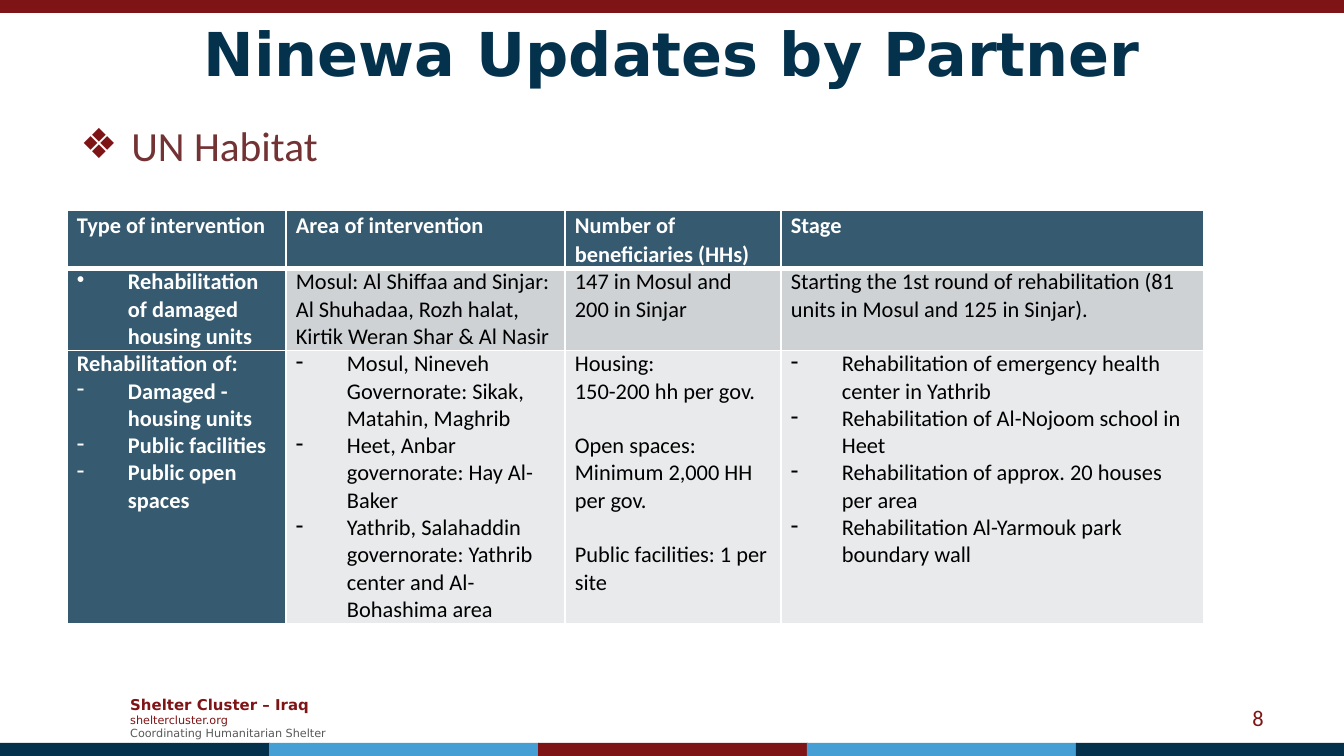
from lxml import etree
from pptx import Presentation
from pptx import util as u
from pptx.dml.color import RGBColor
from pptx.enum import shapes, text
from pptx.oxml import ns

SCALE = 914400 / 134.4  # EMU per px
NAVY, BLUE, RED, WHITE = "04314C", "459FD5", "7F1416", "FFFFFF"
HEAD, BAND, PALE = "365A70", "CED2D5", "E8EAEB"
SANS, BODY = "DejaVu Sans", "Calibri"
INDENT = 51
LEFT, MID = text.PP_ALIGN.LEFT, text.MSO_ANCHOR.MIDDLE

# Table content: plain lines, (bullet, line) pairs, or lines after a gap
GAP = "gap"
HEADS = ["Type of intervention", "Area of intervention",
         "Number of beneficiaries (HHs)", "Stage"]
HOUSING = [
    [("•", "Rehabilitation of damaged housing units")],
    ["Mosul: Al Shiffaa and Sinjar: Al Shuhadaa, Rozh halat, "
     "Kirtik Weran Shar & Al Nasir"],
    ["147 in Mosul and 200 in Sinjar"],
    ["Starting the 1st round of rehabilitation "
     "(81 units in Mosul and 125 in Sinjar)."],
]
SITES = [
    ["Rehabilitation of:", ("-", "Damaged - housing units"),
     ("-", "Public facilities"), ("-", "Public open spaces")],
    [("-", "Mosul, Nineveh Governorate: Sikak, Matahin, Maghrib"),
     ("-", "Heet, Anbar governorate: Hay Al-Baker"),
     ("-", "Yathrib, Salahaddin governorate: Yathrib center "
           "and Al-Bohashima area")],
    ["Housing:", "150-200 hh per gov.", (GAP, "Open spaces:"),
     "Minimum 2,000 HH per gov.", (GAP, "Public facilities: 1 per site")],
    [("-", "Rehabilitation of emergency health center in Yathrib"),
     ("-", "Rehabilitation of Al-Nojoom school in Heet"),
     ("-", "Rehabilitation of approx. 20 houses per area"),
     ("-", "Rehabilitation Al-Yarmouk park boundary wall")],
]


def px(n):
    return u.Emu(round(n * SCALE))


def color(code):
    return RGBColor.from_string(code)


def assign(obj, vals):
    for name, val in vals.items():
        setattr(obj, name, val)


def style(size, code, bold=False, name=BODY):
    return {"size": u.Pt(size), "bold": bold, "name": name, "color": code}


def place(shape, left, top, width, height):
    assign(shape, {"left": px(left), "top": px(top),
                   "width": px(width), "height": px(height)})


def bullet(para, char, code=None):
    props = para._p.get_or_add_pPr()
    props.set("marL", str(px(INDENT)))
    props.set("indent", str(-px(INDENT)))
    if code:
        tint = etree.SubElement(props, ns.qn("a:buClr"))
        etree.SubElement(tint, ns.qn("a:srgbClr"), val=code)
    etree.SubElement(props, ns.qn("a:buChar"), char=char)


def write(para, words, look, align=LEFT, **extra):
    assign(para, {"alignment": align, **extra})
    run = para.add_run()
    run.text = words
    vals = dict(look)
    run.font.color.rgb = color(vals.pop("color"))
    assign(run.font, vals)


def frame(shape, anchor):
    assign(shape.text_frame, {"word_wrap": True, "vertical_anchor": anchor,
                              "auto_size": text.MSO_AUTO_SIZE.NONE})
    return shape.text_frame


def label(slide, box, lines, align=LEFT):
    body = frame(slide.shapes.add_textbox(*map(px, box)), MID)
    for i, (words, look) in enumerate(lines):
        para = body.add_paragraph() if i else body.paragraphs[0]
        write(para, words, look, align)


def bar(slide, box, code):
    rect = slide.shapes.add_shape(shapes.MSO_SHAPE.RECTANGLE, *map(px, box))
    rect.shadow.inherit = False
    rect.fill.solid()
    rect.fill.fore_color.rgb = color(code)
    rect.line.fill.background()


def border(cell, low):
    props = cell._tc.get_or_add_tcPr()
    for i, side in enumerate("LRTB"):
        width = low if side == "B" else 1
        line = etree.Element(ns.qn(f"a:ln{side}"), w=str(u.Pt(width)))
        fill = etree.SubElement(line, ns.qn("a:solidFill"))
        etree.SubElement(fill, ns.qn("a:srgbClr"), val=WHITE)
        props.insert(i, line)


def fill_cell(cell, items, back, look, low=1, **extra):
    assign(cell, {"margin_left": px(10), "margin_right": px(10),
                  "margin_top": 0, "margin_bottom": 0})
    cell.fill.solid()
    cell.fill.fore_color.rgb = color(back)
    border(cell, low)
    for i, item in enumerate(items):
        para = cell.text_frame.paragraphs[0]
        if i:
            para = cell.text_frame.add_paragraph()
        mark, words = item if isinstance(item, tuple) else (None, item)
        fmt = dict(extra)
        if mark == GAP:
            fmt["space_before"] = u.Pt(14.6)
        elif mark:
            bullet(para, mark)
        write(para, words, look, **fmt)


def grid(slide):
    cols, rows = [219, 279, 216, 423], [57, 82, 273]
    table = slide.shapes.add_table(
        len(rows), len(cols), px(67), px(210), px(sum(cols)),
        px(sum(rows))).table
    assign(table, {"first_row": False, "horz_banding": False})
    for col, width in zip(table.columns, cols):
        col.width = px(width)
    for row, height in zip(table.rows, rows):
        row.height = px(height)
    strong, plain = style(12, WHITE, True), style(12, "000000")
    for c, words in enumerate(HEADS):
        fill_cell(table.cell(0, c), [words], HEAD, strong, 3,
                  line_spacing=1.07)
    for r, (data, back) in enumerate([(HOUSING, BAND), (SITES, PALE)], 1):
        for c, items in enumerate(data):
            tone, look = (back, plain) if c else (HEAD, strong)
            fill_cell(table.cell(r, c), items, tone, look)


def main():
    deck = Presentation()
    assign(deck, {"slide_width": px(1344), "slide_height": px(756)})
    slide = deck.slides.add_slide(deck.slide_layouts[1])

    # Coloured bands and footer
    bar(slide, (0, 0, 1344, 13), RED)
    for i, code in enumerate([NAVY, BLUE, RED, BLUE, NAVY]):
        bar(slide, (i * 269, 743, 270 if i < 4 else 268, 13), code)
    label(slide, (117, 688, 233, 59), [
        ("Shelter Cluster – Iraq", style(8, RED, True, SANS)),
        ("sheltercluster.org", style(6, RED, name=SANS)),
        ("Coordinating Humanitarian Shelter", style(6, "595959", name=SANS))])
    label(slide, (964, 698, 313, 40), [("8", style(12, RED))],
          text.PP_ALIGN.RIGHT)

    # Title and partner
    title, body = slide.shapes.title, slide.placeholders[1]
    place(title, 67, 31, 1210, 43)
    write(frame(title, MID).paragraphs[0], "Ninewa Updates by Partner",
          style(32.4, NAVY, True, SANS), text.PP_ALIGN.CENTER)
    place(body, 67, 113, 1180, 56)
    para = frame(body, text.MSO_ANCHOR.TOP).paragraphs[0]
    bullet(para, "❖", RED)
    write(para, "UN Habitat", style(22.2, "733234"), space_before=u.Pt(0))

    grid(slide)
    deck.save("out.pptx")


if __name__ == "__main__":
    main()
